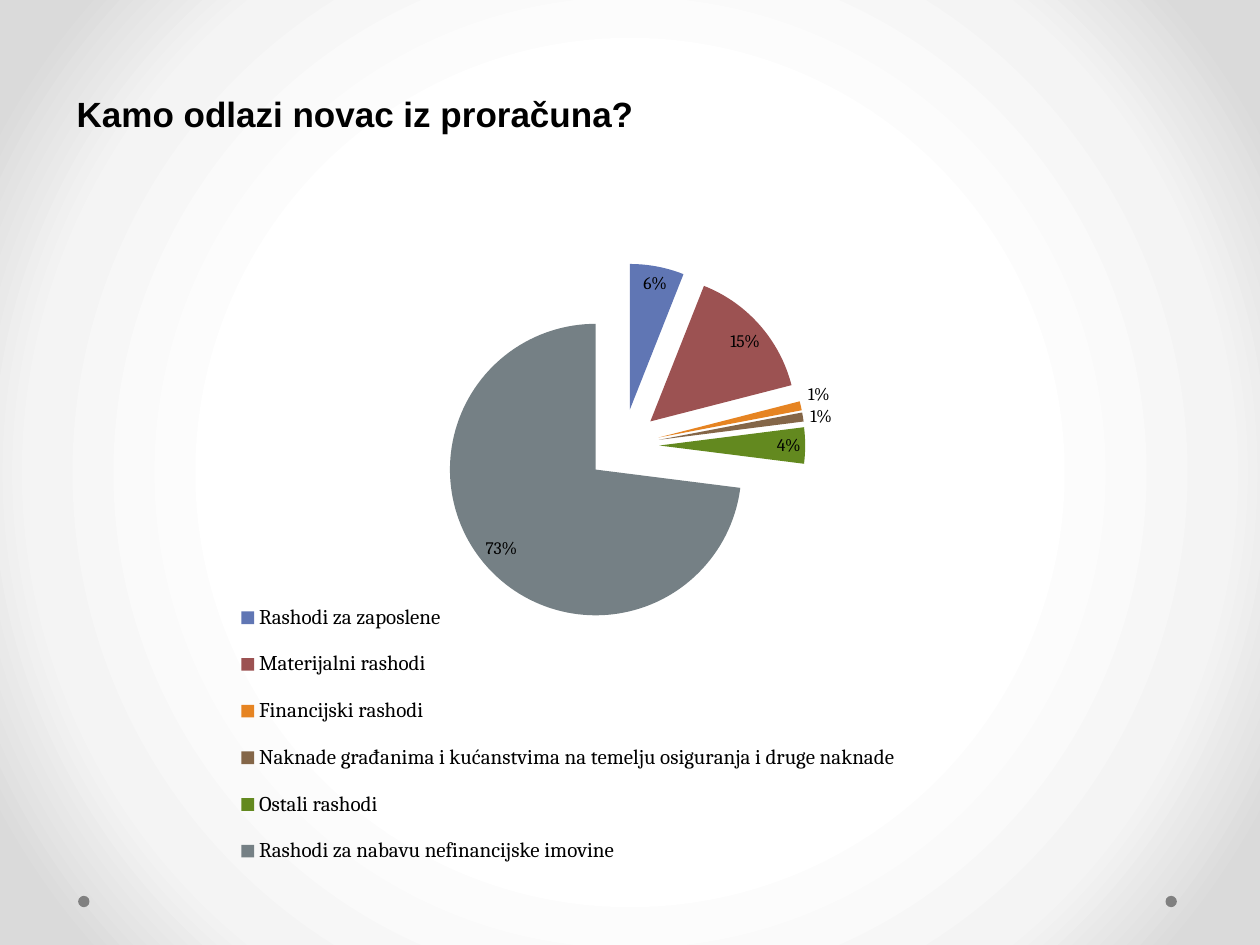
import pptx
import pptx.chart.data
import pptx.dml.color
import pptx.enum.chart
import pptx.enum.shapes
import pptx.oxml
import pptx.oxml.ns
import pptx.util

RGB = pptx.dml.color.RGBColor
BLACK = RGB(0x00, 0x00, 0x00)
GREY = RGB(0x80, 0x80, 0x80)
WIDE, HIGH = pptx.util.Inches(10), pptx.util.Inches(7.5)

GLOW = [(50, "FFFFFF"), (76, "F4F4F4"), (92, "DADADA")]
PARTS = [
    ("Rashodi za zaposlene", 6, RGB(0x60, 0x76, 0xB4)),
    ("Materijalni rashodi", 15, RGB(0x9C, 0x52, 0x52)),
    ("Financijski rashodi", 1, RGB(0xE6, 0x84, 0x22)),
    ("Naknade građanima i kućanstvima na temelju osiguranja i druge naknade",
     1, RGB(0x84, 0x66, 0x48)),
    ("Ostali rashodi", 4, RGB(0x63, 0x89, 0x1F)),
    ("Rashodi za nabavu nefinancijske imovine", 73, RGB(0x75, 0x80, 0x85)),
]

# Boxes as shares of the slide: left, top, width, height
HEAD = (0.051, 0.091, 0.9, 0.66)
PIE = (0.059, 0.216, 0.871, 0.729)
DOTS = (0.062, 0.948, 0.872, 0.012)


def scale(box):
    return [round(share * side) for share, side in zip(box, (WIDE, HIGH) * 2)]


def style(item, form):
    for name, value in form.items():
        setattr(item, name, value)


def node(text):
    spaces = pptx.oxml.ns.nsdecls("a", "c")
    return pptx.oxml.parse_xml(text.replace(">", f" {spaces}>", 1))


def layout(inner, box):
    """Manual chart layout, with the box as shares of the chart."""
    target = '<c:layoutTarget val="inner"/>' if inner else ""
    modes = "".join(f'<c:{side}Mode val="edge"/>' for side in "xy")
    sizes = "".join(f'<c:{side} val="{share}"/>' for side, share in zip("xywh", box))
    return node(f"<c:layout><c:manualLayout>{target}{modes}{sizes}"
                "</c:manualLayout></c:layout>")


def put_layout(owner, before, new):
    for old in owner.findall(pptx.oxml.ns.qn("c:layout")):
        owner.remove(old)
    spot = owner.find(pptx.oxml.ns.qn(before))
    spot.addprevious(new)


def add_glow(slide):
    # Round gradient from the centre outwards
    fill = slide.background.fill
    fill.gradient()
    stops = "".join(f'<a:gs pos="{pos * 1000}"><a:srgbClr val="{tone}"/></a:gs>'
                    for pos, tone in GLOW)
    edges = " ".join(f'{side}="50000"' for side in "ltrb")
    old = slide.background._cSld.find(".//" + pptx.oxml.ns.qn("a:gradFill"))
    old.getparent().replace(old, node(
        f"<a:gradFill><a:gsLst>{stops}</a:gsLst>"
        f'<a:path path="circle"><a:fillToRect {edges}/></a:path></a:gradFill>'))


def add_dots(slide, box):
    # One dot at each end of the strip
    left, top, wide, size = scale(box)
    for edge in (left, left + wide - size):
        dot = slide.shapes.add_shape(
            pptx.enum.shapes.MSO_SHAPE.OVAL, edge, top, size, size)
        dot.shadow.inherit = False
        dot.fill.solid()
        dot.fill.fore_color.rgb = GREY
        dot.line.fill.background()


def add_head(slide, box):
    frame = slide.shapes.add_textbox(*scale(box)).text_frame
    frame.word_wrap = True
    line = frame.paragraphs[0]
    line.space_before = pptx.util.Pt(1)
    run = line.add_run()
    run.text = "Kamo odlazi novac iz proračuna?"
    style(run.font, {"name": "Arial", "size": pptx.util.Pt(20), "bold": True})
    run.font.color.rgb = BLACK


def add_pie(slide, box):
    kinds = pptx.enum.chart
    names, values, tones = zip(*PARTS)
    data = pptx.chart.data.CategoryChartData()
    data.categories = names
    data.add_series("Series 1", values)
    chart = slide.shapes.add_chart(kinds.XL_CHART_TYPE.PIE, *scale(box), data).chart
    style(chart, {"has_title": False, "has_legend": True})
    plot = chart.plots[0]
    style(plot, {"vary_by_categories": True, "has_data_labels": True})

    # Text
    key = chart.legend
    style(key, {"position": kinds.XL_LEGEND_POSITION.BOTTOM, "include_in_layout": False})
    tags = plot.data_labels
    style(tags, {"show_percentage": True, "show_value": False,
                 "number_format": "0%", "number_format_is_linked": False,
                 "position": kinds.XL_LABEL_POSITION.BEST_FIT})
    for font, size in ((chart.font, 10), (key.font, 12), (tags.font, 10)):
        style(font, {"name": "Cambria", "size": pptx.util.Pt(size)})
        font.color.rgb = BLACK

    # Slices, all pulled out from the centre
    row = plot.series[0]
    for place, tone in enumerate(tones):
        fill = row.points[place].format.fill
        fill.solid()
        fill.fore_color.rgb = tone
    slices = row._element.findall(pptx.oxml.ns.qn("c:dPt"))
    spots = [part.find(pptx.oxml.ns.qn("c:spPr")) for part in slices]
    for spot in [slices[0]] + spots:
        spot.addprevious(node('<c:explosion val="25"></c:explosion>'))

    # Places of the pie and its legend
    area = chart._chartSpace.chart.plotArea
    put_layout(area, "c:pieChart", layout(True, (0, 0.086, 1, 0.529)))
    put_layout(key._element, "c:overlay", layout(False, (0.14, 0.55, 0.62, 0.44)))


def main():
    deck = pptx.Presentation()
    style(deck, {"slide_width": WIDE, "slide_height": HIGH})
    slide = deck.slides.add_slide(deck.slide_layouts[6])
    add_glow(slide)
    add_dots(slide, DOTS)
    add_head(slide, HEAD)
    add_pie(slide, PIE)
    deck.save("out.pptx")


if __name__ == "__main__":
    main()
